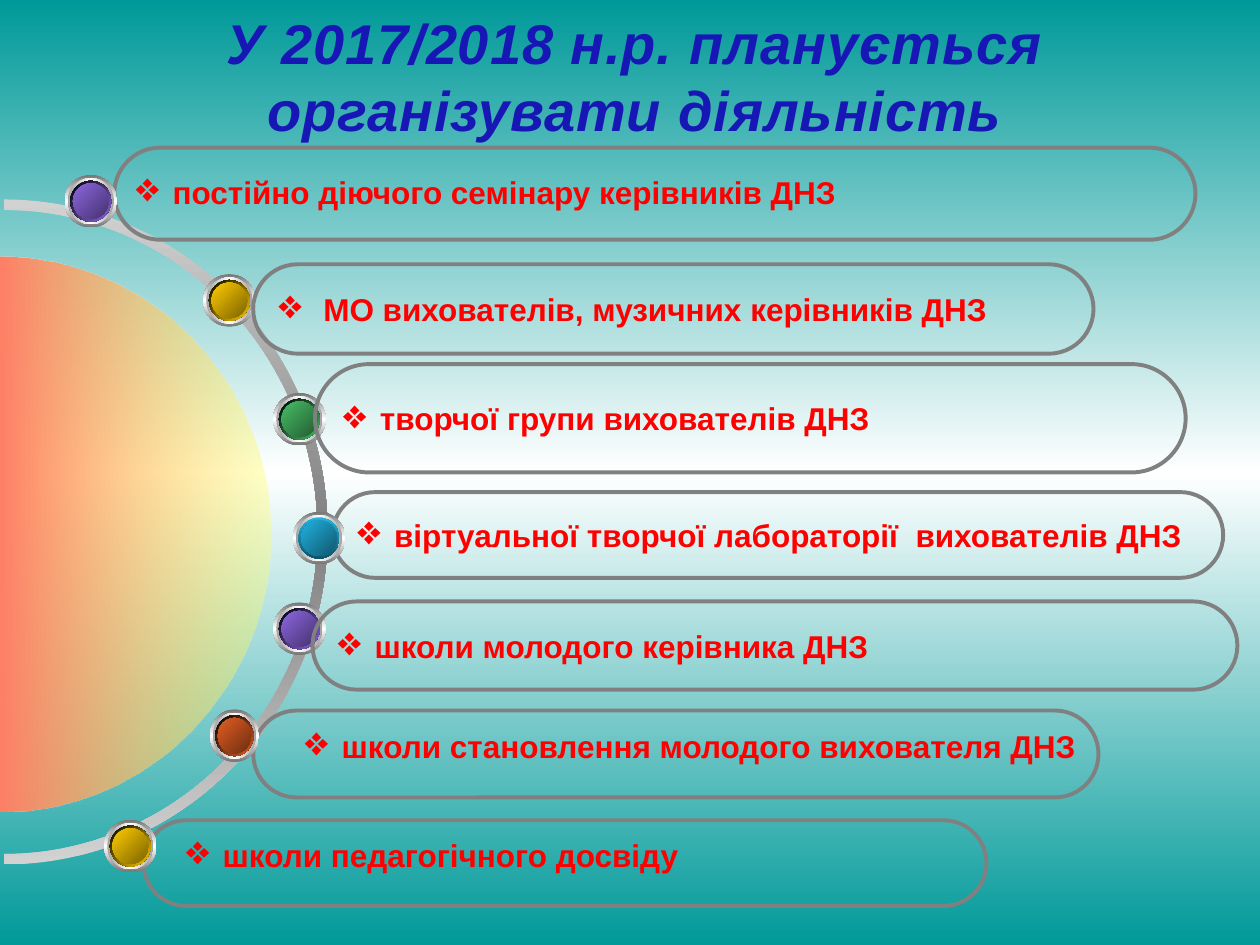
from dataclasses import dataclass

from pptx import Presentation
from pptx import util as u
from pptx.dml.color import RGBColor
from pptx.enum import shapes, text
from pptx.oxml import parse_xml
from pptx.oxml.ns import nsdecls

KAPPA = 0.5523  # handle length of a quarter ellipse drawn as one Bezier curve


@dataclass(frozen=True)
class Theme:
    font: str = "Arial"
    title_size: float = 32
    item_size: float = 18
    bullet_percent: int = 130
    title: str = "1717B5"
    item: str = "FF0000"
    outline: str = "808080"
    outline_width: float = 2.25
    background: tuple = ("009999", "FFFFFF", "009999")
    ring: tuple = ("D2D2D2", "808080", "D2D2D2")
    disc: tuple = ("FF8066", "FFFF66:36")
    rim: tuple = ("767676", "FFFFFF", "767676")
    bevel: tuple = ("A2A2A2", "FFFFFF", "A2A2A2")
    gloss: tuple = ("FFFFFF", "009999", "FFFFFF")
    core: tuple = ("007575", "009999", "007575")
    violet: tuple = ("8D67E1", "45326D")
    yellow: tuple = ("FFCC00", "7C6300")
    green: tuple = ("48BE67", "235C32")
    blue: tuple = ("21B3E1", "10576D")
    orange: tuple = ("E35E23", "6E2E11")
    shade: str = "000000"
    deep_blue: str = "0F5368"


def points(*values):
    return [u.Pt(v) for v in values]


def set_all(obj, fmt):
    for name, value in fmt.items():
        setattr(obj, name, value)


def half_ellipse(cx, cy, rx, ry):
    """Top, right and bottom of an ellipse."""
    return [points(cx, cy - ry), points(cx + rx, cy), points(cx, cy + ry)]


def quarter_curve(start, end, flat_start):
    """Bezier element for a quarter ellipse that leaves start level or upright."""
    (x0, y0), (x1, y1) = start, end
    dx, dy = KAPPA * (x1 - x0), KAPPA * (y1 - y0)
    if flat_start:
        handles = [(x0 + dx, y0), (x1, y1 - dy)]
    else:
        handles = [(x0, y0 + dy), (x1 - dx, y1)]
    pts = "".join(f'<a:pt x="{int(x)}" y="{int(y)}"/>' for x, y in handles + [end])
    return parse_xml(f'<a:cubicBezTo {nsdecls("a")}>{pts}</a:cubicBezTo>')


class SlideMaker:
    def __init__(self, slide, theme):
        self.s, self.t = slide, theme

    def gradient(self, fill, owner, colors, angle):
        """Spread colours evenly; a colour may end in ':opacity percent'."""
        fill.gradient()
        grad = owner.xpath(".//a:gradFill")[0]
        for child in list(grad):
            grad.remove(child)
        stops = ""
        for i, color in enumerate(colors):
            rgb, _, alpha = color.partition(":")
            pos = 100000 * i // (len(colors) - 1)
            opacity = f'<a:alpha val="{alpha}000"/>' if alpha else ""
            stops += f'<a:gs pos="{pos}"><a:srgbClr val="{rgb}">{opacity}</a:srgbClr></a:gs>'
        grad.append(parse_xml(f'<a:gsLst {nsdecls("a")}>{stops}</a:gsLst>'))
        grad.append(parse_xml(f'<a:lin {nsdecls("a")} ang="{angle * 60000}" scaled="0"/>'))

    def background(self):
        self.gradient(self.s.background.fill, self.s.element, self.t.background, 90)

    def half_round(self, vertices, colors, angle):
        """Outline of half ellipses, three vertices each, joined by straight lines."""
        builder = self.s.shapes.build_freeform(*vertices[0], scale=1.0)
        builder.add_line_segments(vertices[1:], close=True)
        sp = builder.convert_to_shape()
        ends = [(int(pt.get("x")), int(pt.get("y")))
                for pt in sp.element.xpath(".//a:path//a:pt")]
        for i, line in enumerate(sp.element.xpath(".//a:path/a:lnTo")):
            if i % 3 < 2 and i + 1 < len(vertices):
                curve = quarter_curve(ends[i], ends[i + 1], flat_start=i % 3 == 0)
                line.getparent().replace(line, curve)
        self.paint(sp, colors, angle)

    def paint(self, sp, colors, angle):
        sp.shadow.inherit = False
        sp.line.fill.background()
        self.gradient(sp.fill, sp.element, colors, angle)

    def bead(self, x, y, colors, shade, shade_angle=45, w=30, h=30):
        t = self.t
        group = self.s.shapes.add_group_shape()
        layers = [(0, t.rim, 90), (0.06, t.bevel, 0),
                  (0.11, t.gloss, 45), (0.11, shade, shade_angle),
                  (0.16, t.core, 315), (0.16, colors, 45)]
        for inset, fill, angle in layers:
            dx, dy = w * inset, h * inset
            sp = group.shapes.add_shape(
                shapes.MSO_SHAPE.OVAL, *points(x + dx, y + dy, w - 2 * dx, h - 2 * dy))
            self.paint(sp, fill, angle)

    def pill(self, box, label=None, gap=16):
        sp = self.s.shapes.add_shape(shapes.MSO_SHAPE.ROUNDED_RECTANGLE, *points(*box))
        sp.adjustments[0] = 0.5
        sp.shadow.inherit = False
        sp.fill.background()
        sp.line.color.rgb = RGBColor.from_string(self.t.outline)
        sp.line.width = u.Pt(self.t.outline_width)
        if label:
            set_all(sp.text_frame, dict(
                word_wrap=False, vertical_anchor=text.MSO_ANCHOR.MIDDLE))
            self.bullet(sp.text_frame, label, gap)

    def bullet_box(self, box, label):
        tf = self.s.shapes.add_textbox(*points(*box)).text_frame
        tf.word_wrap = True
        self.bullet(tf, label, 16)

    def bullet(self, tf, label, gap):
        p = tf.paragraphs[0]
        p.alignment = text.PP_ALIGN.LEFT
        pPr = p._p.get_or_add_pPr()
        pPr.set("marL", str(u.Pt(gap)))
        pPr.set("indent", str(-u.Pt(gap)))
        pPr.append(parse_xml(
            f'<a:buSzPct {nsdecls("a")} val="{self.t.bullet_percent}000"/>'))
        pPr.append(parse_xml(f'<a:buChar {nsdecls("a")} char="❖"/>'))
        self.run(p, " " + label, self.t.item, dict(size=u.Pt(self.t.item_size), bold=True))

    def run(self, p, label, color, fmt):
        r = p.add_run()
        r.text = label
        set_all(r.font, dict(fmt, name=self.t.font))
        r.font.color.rgb = RGBColor.from_string(color)
        return r

    def title(self, box, label):
        tf = self.s.shapes.add_textbox(*points(*box)).text_frame
        set_all(tf, dict(word_wrap=True, vertical_anchor=text.MSO_ANCHOR.MIDDLE))
        p = tf.paragraphs[0]
        p.alignment = text.PP_ALIGN.CENTER
        r = self.run(p, label, self.t.title,
                     dict(size=u.Pt(self.t.title_size), bold=True, italic=True))
        r._r.get_or_add_rPr().set("spc", "50")


def main():
    prs = Presentation()
    prs.slide_width, prs.slide_height = points(720, 540)
    t = Theme()
    m = SlideMaker(prs.slides.add_slide(prs.slide_layouts[6]), t)

    # Background and title
    m.background()
    m.title((14, 9, 697.7, 68.4), "У 2017/2018 н.р. планується організувати діяльність")

    # Ring and half disc on the left
    inner = half_ellipse(2.2, 304, 179.3, 184)
    outer = half_ellipse(2.2, 304, 185, 190)
    m.half_round(inner + outer[::-1], t.ring, 90)
    m.half_round(half_ellipse(0, 305.2, 154.8, 158.4), t.disc, 0)

    # Pills behind the beads
    m.pill((144.7, 406, 483, 49.7))
    m.pill((190, 281.2, 509, 49), "віртуальної творчої лабораторії  вихователів ДНЗ")
    m.pill((82, 468.7, 481.7, 49))
    m.pill((65.3, 84.4, 617.8, 52.6))

    # Beads along the ring
    for x, y, colors in [(116.1, 156.7, t.yellow), (156.1, 224.6, t.green)]:
        m.bead(x, y, colors, (t.shade, colors[0]))
    m.bead(167.3, 292.5, t.blue, (t.blue[0], t.deep_blue), 90)
    m.bead(156.1, 344.3, t.violet, (t.shade, t.violet[0]))
    m.bead(120, 405.4, t.orange, (t.shade, t.orange[0]), w=28)
    m.pill((144.7, 151, 480.2, 51.1), "МО вихователів, музичних керівників ДНЗ", gap=20.5)
    for x, y, colors in [(36.9, 100, t.violet), (59.5, 468.5, t.yellow)]:
        m.bead(x, y, colors, (t.shade, colors[0]))

    # Pills in front of the beads, and free labels
    m.bullet_box((70.6, 95.4, 623.5, 28.8), "постійно діючого семінару керівників ДНЗ")
    m.pill((178.6, 343.7, 528.5, 50.4), "школи молодого керівника ДНЗ")
    m.pill((180, 208.1, 497.5, 61.9), "творчої групи вихователів ДНЗ")
    m.bullet_box((167.2, 411.8, 493.2, 28.8), "школи становлення молодого вихователя ДНЗ")
    m.bullet_box((99.2, 474, 527, 28.8), "школи педагогічного досвіду")

    prs.save("out.pptx")


if __name__ == "__main__":
    main()
